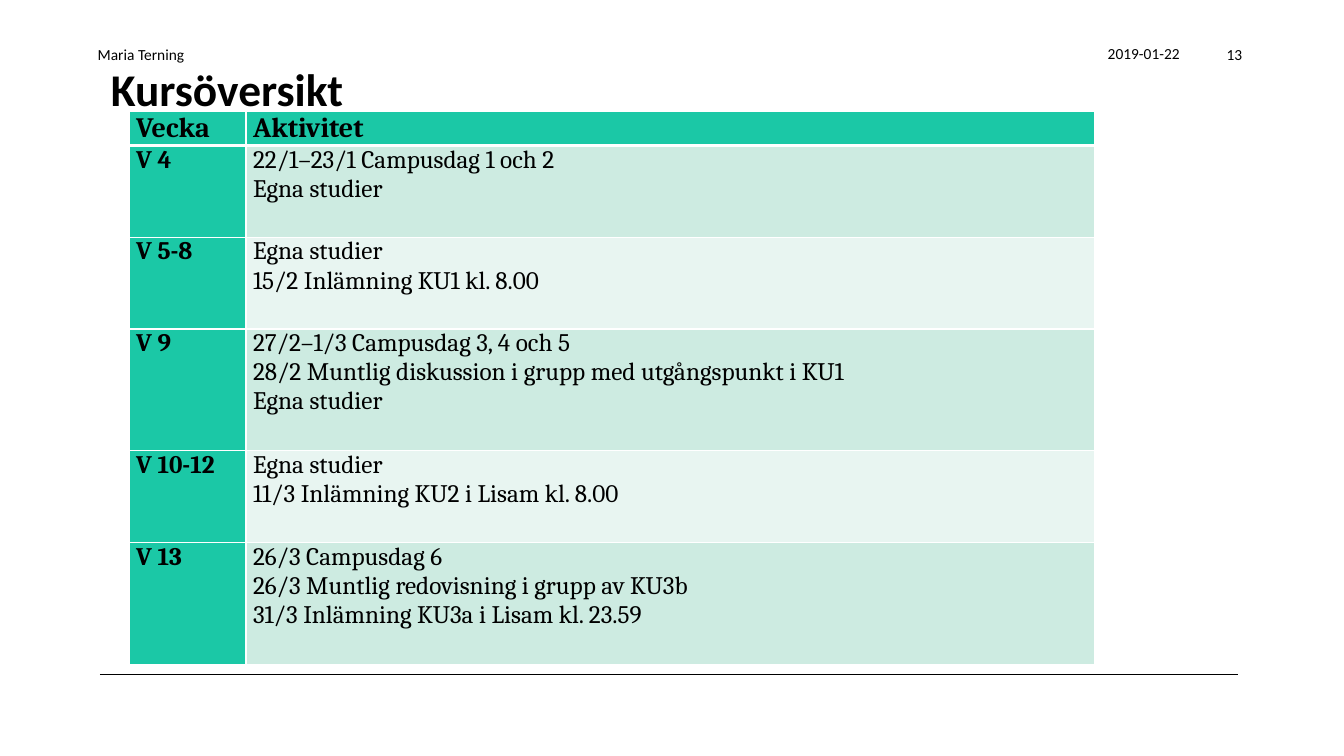
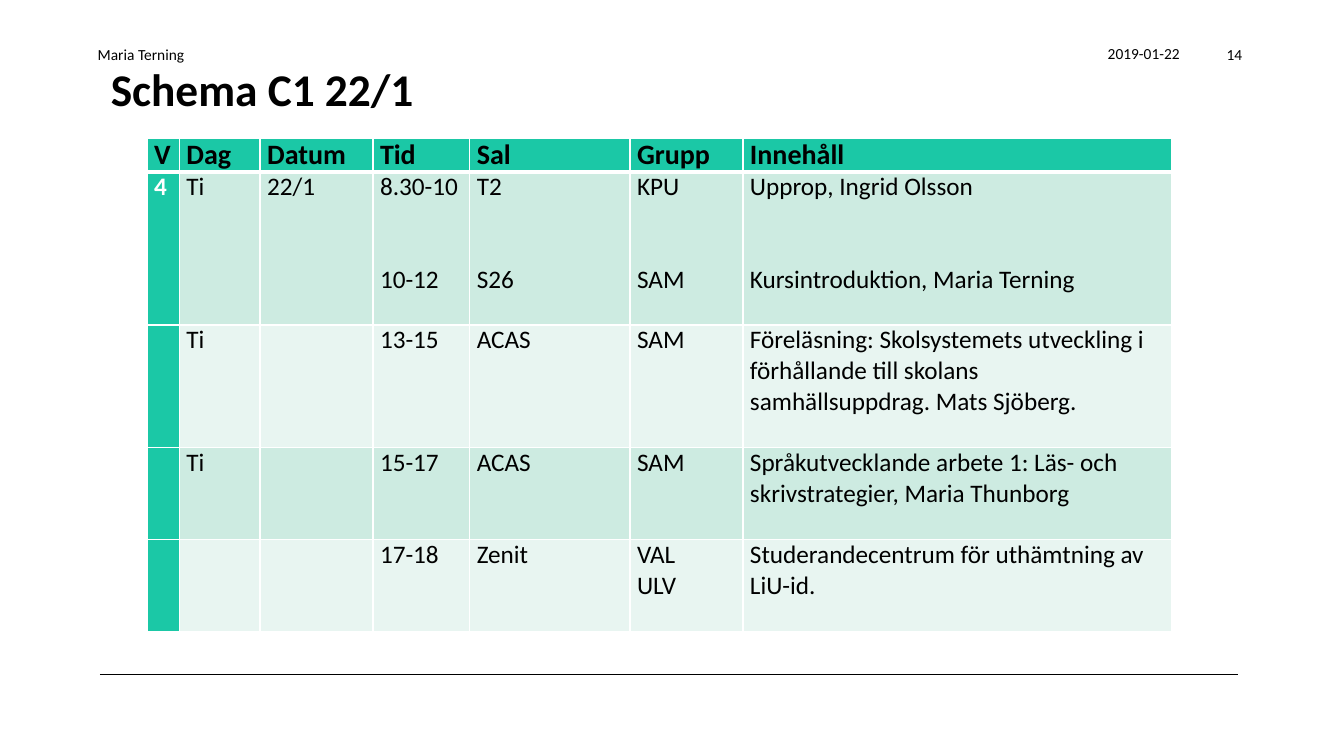
from lxml import etree
from pptx import Presentation
from pptx import util as u
from pptx.dml.color import RGBColor
from pptx.enum import text
from pptx.oxml.ns import qn

BLACK, WHITE = "000000", "FFFFFF"
GREEN, BANDS = "1BC8A6", ("CDEBE1", "E8F5F1")
LINE_GAP = 44  # points between two sessions in one cell


def colour(value):
    return RGBColor.from_string(value)


def write(frame, lines, look, align=text.PP_ALIGN.LEFT, gap=0):
    """Fill a text frame with one paragraph per line."""
    for index, line in enumerate(lines):
        para = frame.paragraphs[0] if index == 0 else frame.add_paragraph()
        para.alignment = align
        if index:
            para.space_before = u.Pt(gap)
        span = para.add_run()
        span.text = line
        span.font.color.rgb = colour(look["colour"])
        for name in ("name", "size", "bold"):
            setattr(span.font, name, look[name])


# Shared styles
title_look = {"name": "Calibri", "size": u.Pt(32.4), "bold": True, "colour": BLACK}
small_look = {"name": "Calibri", "size": u.Pt(11), "bold": False, "colour": BLACK}
LEFT, RIGHT = text.PP_ALIGN.LEFT, text.PP_ALIGN.RIGHT
TOP, MIDDLE, BOTTOM = (text.MSO_ANCHOR.TOP, text.MSO_ANCHOR.MIDDLE,
                       text.MSO_ANCHOR.BOTTOM)

# Content: each cell is a list of lines
pages = [
    {
        "title": "Kursöversikt", "number": "13", "font": "Cambria",
        "place": (1.28, 1.11), "key_colour": BLACK,
        "columns": [1.16, 8.42],
        "heights": [0.3, 0.91, 0.91, 1.21, 0.91, 1.21],
        "rows": [
            [["Vecka"], ["Aktivitet"]],
            [["V 4"], ["22/1–23/1 Campusdag 1 och 2", "Egna studier"]],
            [["V 5-8"], ["Egna studier", "15/2 Inlämning KU1 kl. 8.00"]],
            [["V 9"], ["27/2–1/3 Campusdag 3, 4 och 5",
                       "28/2 Muntlig diskussion i grupp med utgångspunkt i KU1",
                       "Egna studier"]],
            [["V 10-12"], ["Egna studier", "11/3 Inlämning KU2 i Lisam kl. 8.00"]],
            [["V 13"], ["26/3 Campusdag 6",
                        "26/3 Muntlig redovisning i grupp av KU3b",
                        "31/3 Inlämning KU3a i Lisam kl. 23.59"]],
        ],
        "gaps": {},
    },
    {
        "title": "Schema C1 22/1", "number": "14", "font": "Calibri",
        "place": (1.46, 1.37), "key_colour": WHITE,
        "columns": [0.32, 0.8, 1.12, 0.96, 1.59, 1.12, 4.25],
        "heights": [0.3, 1.52, 1.22, 0.91, 0.91],
        "rows": [
            [["V"], ["Dag"], ["Datum"], ["Tid"], ["Sal"], ["Grupp"], ["Innehåll"]],
            [["4"], ["Ti"], ["22/1"], ["8.30-10", "10-12"], ["T2", "S26"],
             ["KPU", "SAM"],
             ["Upprop, Ingrid Olsson", "Kursintroduktion, Maria Terning"]],
            [[], ["Ti"], [], ["13-15"], ["ACAS"], ["SAM"],
             ["Föreläsning: Skolsystemets utveckling i förhållande till skolans "
              "samhällsuppdrag. Mats Sjöberg."]],
            [[], ["Ti"], [], ["15-17"], ["ACAS"], ["SAM"],
             ["Språkutvecklande arbete 1: Läs- och skrivstrategier, "
              "Maria Thunborg"]],
            [[], [], [], ["17-18"], ["Zenit"], ["VAL", "ULV"],
             ["Studerandecentrum för uthämtning av LiU-id."]],
        ],
        "gaps": {1: LINE_GAP},
    },
]

deck = Presentation()
deck.slide_width, deck.slide_height = u.Inches(13.33), u.Inches(7.5)

for content in pages:
    page = deck.slides.add_slide(deck.slide_layouts[6])

    # Bottom rule
    rule = page.shapes.add_connector(1, u.Inches(0.99), u.Inches(6.69),
                                     u.Inches(12.28), u.Inches(6.69))
    rule.line.color.rgb = colour(BLACK)
    rule.line.width = u.Pt(0.75)
    etree.SubElement(rule._element.spPr, qn("a:effectLst"))

    # Title and header line
    for words, place, look, align, anchor in (
        (content["title"], (1, 0.54, 11.28, 0.68), title_look, LEFT, MIDDLE),
        ("2019-01-22", (9.71, 0.39, 2.09, 0.29), small_look, RIGHT, TOP),
        (content["number"], (11.61, 0.4, 0.81, 0.29), small_look, RIGHT, TOP),
        ("Maria Terning", (0.87, 0.39, 8.51, 0.29), small_look, LEFT, BOTTOM),
    ):
        box = page.shapes.add_textbox(*map(u.Inches, place))
        box.text_frame.word_wrap = True
        box.text_frame.vertical_anchor = anchor
        write(box.text_frame, [words], look, align)

    # Table grid
    rows, columns, heights = content["rows"], content["columns"], content["heights"]
    size = (sum(columns), sum(heights))
    table = page.shapes.add_table(len(rows), len(columns),
                                  *map(u.Inches, content["place"] + size)).table
    for column, width in zip(table.columns, columns):
        column.width = u.Inches(width)
    for row, height in zip(table.rows, heights):
        row.height = u.Inches(height)

    # Table cells
    for r, row in enumerate(rows):
        for c, lines in enumerate(row):
            cell = table.cell(r, c)
            margins = {"margin_left": 0.07, "margin_right": 0.07,
                       "margin_top": 0, "margin_bottom": 0}
            for name, value in margins.items():
                setattr(cell, name, u.Inches(value))

            # White borders, heavier between the header and the body
            borders = {"lnL": 1, "lnR": 1, "lnT": 3 if r == 1 else 1,
                       "lnB": 3 if r == 0 else 1}
            for side, width in borders.items():
                edge = etree.SubElement(cell._tc.get_or_add_tcPr(),
                                        qn("a:" + side), w=str(u.Pt(width)))
                paint = etree.SubElement(edge, qn("a:solidFill"))
                etree.SubElement(paint, qn("a:srgbClr"), val=WHITE)

            is_key = r == 0 or c == 0
            cell.fill.solid()
            cell.fill.fore_color.rgb = colour(GREEN if is_key else BANDS[(r - 1) % 2])
            look = {"name": content["font"], "size": u.Pt(18 if r else 20),
                    "bold": is_key,
                    "colour": content["key_colour"] if r and c == 0 else BLACK}
            write(cell.text_frame, lines, look, gap=content["gaps"].get(r, 0))

deck.save("out.pptx")
